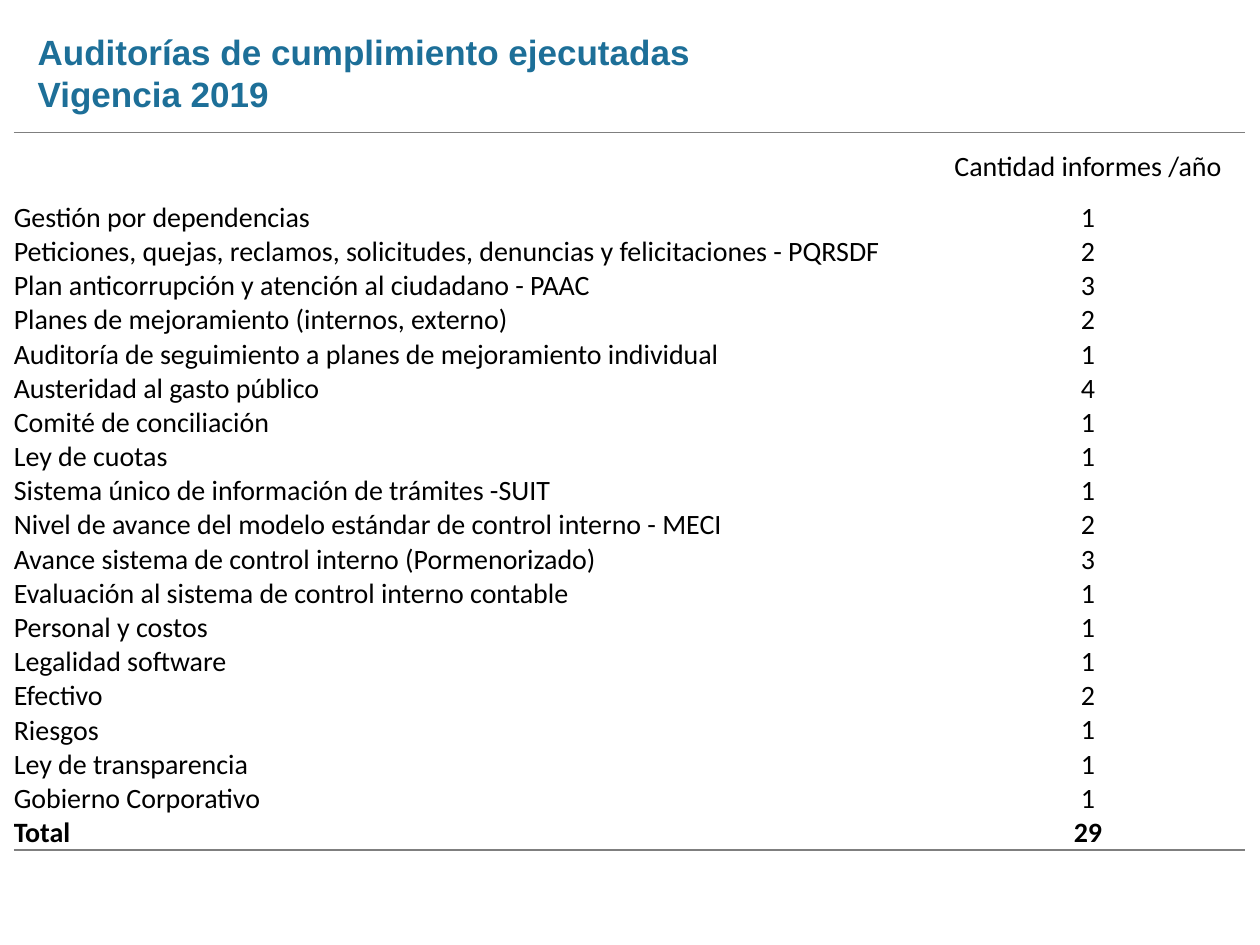
"""Build the slide that lists the compliance audits carried out in 2019."""
from lxml.etree import SubElement
from pptx import Presentation
from pptx.dml.color import RGBColor
from pptx.enum.text import MSO_ANCHOR as Anchor, MSO_AUTO_SIZE as AutoSize, PP_ALIGN as Align
from pptx.oxml.ns import qn
from pptx.util import Inches, Pt

COLORS = {"title": "1D6F98", "text": "000000", "rule": "7F7F7F"}
NO_STYLE = "{2D5ABB26-0587-4C30-8999-92F81FD0307C}"
TITLE = ["Auditorías de cumplimiento ejecutadas", "Vigencia 2019"]
HEADER = ("", "Cantidad informes /año")
AUDITS = [
    ("Gestión por dependencias", 1),
    ("Peticiones, quejas, reclamos, solicitudes, denuncias y felicitaciones - PQRSDF", 2),
    ("Plan anticorrupción y atención al ciudadano - PAAC", 3),
    ("Planes de mejoramiento (internos, externo)", 2),
    ("Auditoría de seguimiento a planes de mejoramiento individual", 1),
    ("Austeridad al gasto público", 4),
    ("Comité de conciliación", 1),
    ("Ley de cuotas", 1),
    ("Sistema único de información de trámites -SUIT", 1),
    ("Nivel de avance del modelo estándar de control interno - MECI", 2),
    ("Avance sistema de control interno (Pormenorizado)", 3),
    ("Evaluación al sistema de control interno contable", 1),
    ("Personal y costos", 1),
    ("Legalidad software", 1),
    ("Efectivo", 2),
    ("Riesgos", 1),
    ("Ley de transparencia", 1),
    ("Gobierno Corporativo", 1),
]


def add_span(para, text, font, size, color, bold=False):
    span = para.add_run()
    span.text = text
    span.font.name = font
    span.font.size = Pt(size)
    span.font.bold = bold
    span.font.color.rgb = RGBColor.from_string(COLORS[color])


def add_title(page):
    box = page.shapes.add_textbox(Inches(0.2), Inches(0.19), Inches(7.15), Inches(1.31))
    frame = box.text_frame
    frame.word_wrap = True
    frame.auto_size = AutoSize.SHAPE_TO_FIT_TEXT
    for index, line in enumerate(TITLE):
        para = frame.add_paragraph() if index else frame.paragraphs[0]
        add_span(para, line, "Arial", 20, "title", bold=True)


def add_rule(cell, side):
    """Draw a border on one side of a cell, "lnT" or "lnB"."""
    border = SubElement(cell._tc.get_or_add_tcPr(), qn(f"a:{side}"), w=str(Pt(1)))
    fill = SubElement(border, qn("a:solidFill"))
    SubElement(fill, qn("a:srgbClr"), val=COLORS["rule"])


def fill_cell(cell, text, anchor, align, bold):
    cell.margin_left = cell.margin_right = cell.margin_top = cell.margin_bottom = 0
    cell.vertical_anchor = anchor
    para = cell.text_frame.paragraphs[0]
    para.alignment = align
    para.font.size = Pt(16)
    if text:
        add_span(para, text, "Calibri", 16, "text", bold)


def add_audit_table(page):
    total = sum(count for _, count in AUDITS)
    rows = [HEADER, *AUDITS, ("Total", total)]
    last = len(rows) - 1
    frame = page.shapes.add_table(len(rows), 2, Inches(0.11), Inches(1.05), Inches(9.77), Inches(5.7))
    table = frame.table
    table.first_row = table.horz_banding = False
    table._tbl.tblPr.find(qn("a:tableStyleId")).text = NO_STYLE
    for column, width in zip(table.columns, (7.28, 2.49)):
        column.width = Inches(width)
    for index, (name, count) in enumerate(rows):
        table.rows[index].height = Inches(5.7 / (len(rows) + 1) * (1 if index else 2))
        label, value = table.rows[index].cells
        fill_cell(label, name, Anchor.MIDDLE, Align.LEFT, index == last)
        fill_cell(value, str(count), Anchor.BOTTOM if index else Anchor.MIDDLE, Align.CENTER, index == last)
        for cell in (label, value):
            if index == 0:
                add_rule(cell, "lnT")
            elif index == last:
                add_rule(cell, "lnB")
            cell.fill.background()


def main():
    deck = Presentation()
    deck.slide_width, deck.slide_height = Inches(10), Inches(7.5)
    page = deck.slides.add_slide(deck.slide_layouts[6])
    add_title(page)
    add_audit_table(page)
    deck.save("out.pptx")


if __name__ == "__main__":
    main()
